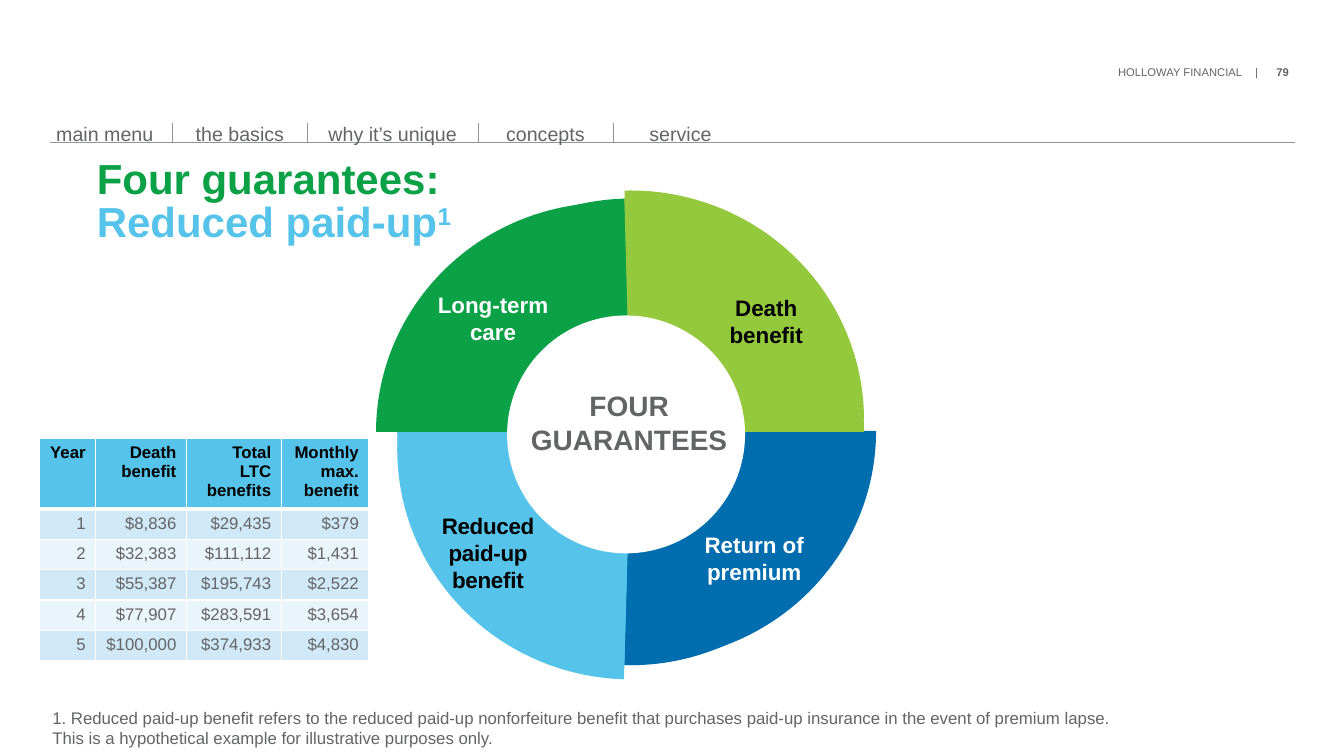
from lxml import etree
from pptx import Presentation
from pptx.dml.color import RGBColor
from pptx.enum.shapes import MSO_CONNECTOR, MSO_SHAPE
from pptx.enum.text import PP_ALIGN
from pptx.oxml.ns import qn
from pptx.util import Inches, Pt

COLORS = {
    "green": "0AA147", "lime": "94C83D", "sky": "56C4EA", "navy": "006DAF",
    "header": "56C3EA", "band": "D1E9F7", "pale": "E9F5FB",
    "gray": "636466", "rule": "929497", "white": "FFFFFF", "black": "000000",
}


def rgb(name):
    return RGBColor.from_string(COLORS[name])


def write(frame, paragraphs, size, align=PP_ALIGN.LEFT):
    """Fill a text frame; each paragraph is a list of (text, color, bold) runs."""
    frame.word_wrap = True
    for index, runs in enumerate(paragraphs):
        paragraph = frame.paragraphs[0] if index == 0 else frame.add_paragraph()
        paragraph.alignment = align
        for text, color, bold in runs:
            run = paragraph.add_run()
            run.text = text
            run.font.name = "Arial"
            run.font.size = Pt(size)
            run.font.bold = bold
            run.font.color.rgb = rgb(color)


prs = Presentation()
prs.slide_width, prs.slide_height = Inches(13.33), Inches(7.5)
slide = prs.slides.add_slide(prs.slide_layouts[6])
shapes = slide.shapes

# Page header
page_header = shapes.add_textbox(Inches(11.09), Inches(0.64), Inches(1.8), Inches(0.15)).text_frame
page_header.margin_left = page_header.margin_right = page_header.margin_bottom = 0
page_header.margin_top = Inches(0.01)
header_props = page_header.paragraphs[0]._p.get_or_add_pPr()
tab_list = etree.SubElement(header_props, qn("a:tabLst"))
for position in (1.36, 1.57):
    etree.SubElement(tab_list, qn("a:tab"), pos=str(Inches(position)), algn="l")
write(page_header, [[("HOLLOWAY FINANCIAL\t|\t", "gray", False), ("79", "gray", True)]], 8)

# Navigation menu: one long rule and a divider between entries
rules = [(0.5, 1.41, 12.84)] + [(x, 1.22, x) for x in (1.71, 3.05, 4.74, 6.08)]
for left, top, right in rules:
    rule = shapes.add_connector(
        MSO_CONNECTOR.STRAIGHT, Inches(left), Inches(top), Inches(right), Inches(1.41))
    rule.line.color.rgb = rgb("rule")
    rule.line.width = Pt(0.5)
    etree.SubElement(rule._element.spPr, qn("a:effectLst"))

menu = [("main menu", 0.44, 1.2), ("the basics", 1.78, 1.2), ("why it’s unique", 3.12, 1.55),
        ("concepts", 4.81, 1.2), ("service", 6.15, 1.2)]
for entry, left, width in menu:
    box = shapes.add_textbox(Inches(left), Inches(1.16), Inches(width), Inches(0.34))
    write(box.text_frame, [[(entry, "gray", False)]], 14, PP_ALIGN.CENTER)

# Yearly benefits table
benefits = [
    ("Year", "Death benefit", "Total LTC benefits", "Monthly max. benefit"),
    ("1", "$8,836", "$29,435", "$379"),
    ("2", "$32,383", "$111,112", "$1,431"),
    ("3", "$55,387", "$195,743", "$2,522"),
    ("4", "$77,907", "$283,591", "$3,654"),
    ("5", "$100,000", "$374,933", "$4,830"),
]
table = shapes.add_table(
    len(benefits), 4, Inches(0.39), Inches(4.35), Inches(3.27), Inches(2.2)).table
for column, width in zip(table.columns, (0.56, 0.9, 0.94, 0.87)):
    column.width = Inches(width)
for row_index, values in enumerate(benefits):
    is_header = row_index == 0
    table.rows[row_index].height = Inches(0.7 if is_header else 0.3)
    fill = "header" if is_header else ("band" if row_index % 2 else "pale")
    for column_index, value in enumerate(values):
        cell = table.cell(row_index, column_index)
        write(cell.text_frame, [[(value, "black" if is_header else "gray", is_header)]],
              12, PP_ALIGN.RIGHT)
        if column_index == 0:
            cell.margin_left = Inches(0.08)
        cell_props = cell._tc.get_or_add_tcPr()
        for side in ("lnL", "lnR", "lnT", "lnB"):
            thick = (is_header and side == "lnB") or (row_index == 1 and side == "lnT")
            border = etree.SubElement(cell_props, qn(f"a:{side}"), w=str(Pt(3 if thick else 1)))
            border_fill = etree.SubElement(border, qn("a:solidFill"))
            etree.SubElement(border_fill, qn("a:srgbClr"), val=COLORS["white"])
        cell.fill.solid()
        cell.fill.fore_color.rgb = rgb(fill)

# Title
title = shapes.add_textbox(Inches(0.96), Inches(1.58), Inches(4.69), Inches(1.63)).text_frame
title.margin_left = title.margin_top = title.margin_right = title.margin_bottom = 0
write(title, [[("Four guarantees: ", "green", True), ("Reduced paid-up", "sky", True),
               ("1", "sky", True)]], 30)
title.paragraphs[0].line_spacing = Pt(31)
title.paragraphs[0].runs[-1].font._element.set("baseline", "30000")

# Ring of four quarters: each color has a fixed flip of the upper-left quarter
flips = {"green": "", "lime": "H", "sky": "V", "navy": "HV"}
quarters = [
    ("navy", 4.06, 2, 4.55, 0),
    *[(color, 3.94, 1.97, 4.63, 0) for color in ("sky", "green", "navy", "lime")],
    ("lime", 3.94, 1.89, 4.55, 0),
    ("green", 3.73, 2.01, 4.55, 0),
    ("sky", 3.94, 2.19, 4.55, 3.2),
]
for color, left, top, height, rotation in quarters:
    quarter = shapes.add_shape(
        MSO_SHAPE.BLOCK_ARC, Inches(left), Inches(top), Inches(4.63), Inches(height))
    for index, value in enumerate((108, 162.916, 0.324)):
        quarter.adjustments[index] = value
    for axis in flips[color]:
        quarter._element.spPr.xfrm.set(f"flip{axis}", "1")
    quarter.rotation = rotation
    quarter.shadow.inherit = False
    quarter.fill.solid()
    quarter.fill.fore_color.rgb = rgb(color)
    quarter.line.fill.background()

hub = shapes.add_shape(MSO_SHAPE.OVAL, Inches(5.03), Inches(3.13), Inches(2.36), Inches(2.36))
hub.shadow.inherit = False
hub.fill.solid()
hub.fill.fore_color.rgb = rgb("white")
hub.line.fill.background()

ring_labels = [
    ("Long-term care", 4.05, 2.84, 1.68, 0.64, 16, "white", 0),
    ("Death benefit", 6.88, 2.87, 1.44, 0.64, 16, "black", 0),
    ("Return of premium", 6.64, 5.22, 1.68, 0.64, 16, "white", 0),
    ("Reduced paid-up benefit", 4.14, 5.03, 1.4, 0.91, 16, "black", -20),
    ("FOUR GUARANTEES", 5.03, 3.81, 2.42, 0.77, 20, "gray", 0),
]
for label, left, top, width, height, size, color, spacing in ring_labels:
    box = shapes.add_textbox(Inches(left), Inches(top), Inches(width), Inches(height))
    write(box.text_frame, [[(label, color, True)]], size, PP_ALIGN.CENTER)
    box.text_frame.paragraphs[0].runs[0].font._element.set("spc", str(spacing))

# Footnote
footnote = shapes.add_textbox(Inches(0.42), Inches(6.97), Inches(12.91), Inches(0.5))
write(footnote.text_frame, [
    [("1. Reduced paid-up benefit refers to the reduced paid-up nonforfeiture benefit that "
      "purchases paid-up insurance in the event of premium lapse.", "gray", False)],
    [("This is a hypothetical example for illustrative purposes only.", "gray", False)],
], 12)

prs.save("out.pptx")
